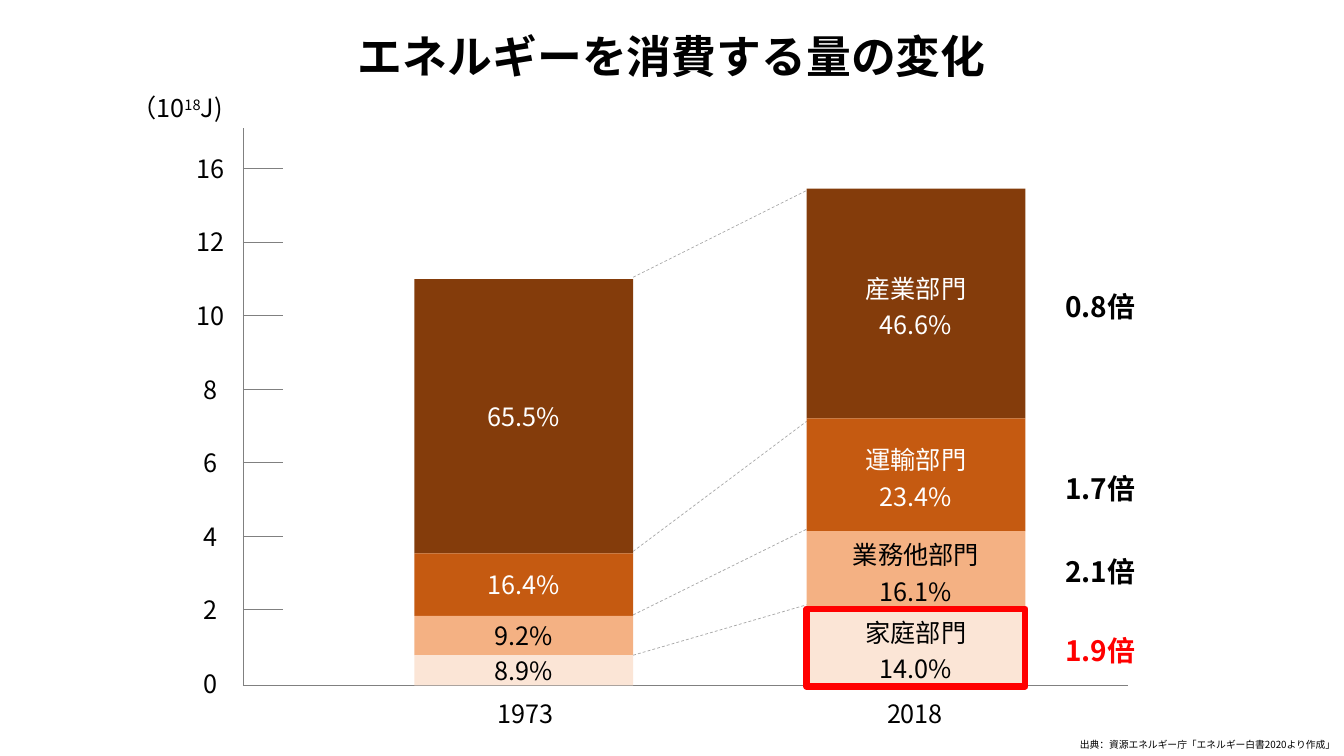
import lxml.etree
import pptx
import pptx.dml.color
import pptx.enum.dml
import pptx.enum.shapes
import pptx.enum.text
import pptx.oxml.ns
import pptx.util

Inches = pptx.util.Inches
Pt = pptx.util.Pt
RGBColor = pptx.dml.color.RGBColor
PP_ALIGN = pptx.enum.text.PP_ALIGN
MSO_ANCHOR = pptx.enum.text.MSO_ANCHOR
qn = pptx.oxml.ns.qn

BLACK = RGBColor(0x00, 0x00, 0x00)
WHITE = RGBColor(0xFF, 0xFF, 0xFF)
RED = RGBColor(0xFF, 0x00, 0x00)
AXIS_GRAY = RGBColor(0x80, 0x80, 0x80)
LINK_GRAY = RGBColor(0xA6, 0xA6, 0xA6)
# (fill, text) for industry, transport, commercial, household
SECTOR_COLORS = [
    (RGBColor(0x84, 0x3C, 0x0B), WHITE),
    (RGBColor(0xC5, 0x5A, 0x11), WHITE),
    (RGBColor(0xF4, 0xB1, 0x83), BLACK),
    (RGBColor(0xFB, 0xE5, 0xD6), BLACK),
]

AXIS_X, AXIS_TOP, AXIS_RIGHT, BASELINE = 2.41, 1.27, 11.19, 6.8
TICK_TOP, TICK_STEP, TICK_LENGTH = 1.67, 0.73, 0.4
BAR_WIDTH = 2.17
BAR_1973, BAR_2018 = 4.11, 8


class SlideBuilder:
    font_name = "Noto Sans CJK JP"

    def __init__(self, slide):
        self.slide = slide

    def add_run(self, paragraph, text, size, color, bold=False, baseline=0):
        run = paragraph.add_run()
        run.text = text
        run.font.size = Pt(size)
        run.font.bold = bold
        run.font.color.rgb = color
        run.font.name = self.font_name
        properties = run.font._element
        lxml.etree.SubElement(properties, qn("a:ea"), typeface=self.font_name)
        if baseline:
            properties.set("baseline", str(baseline * 1000))

    def title(self, text, left, top, width, height):
        shape = self.slide.shapes.title
        shape.left, shape.top = Inches(left), Inches(top)
        shape.width, shape.height = Inches(width), Inches(height)
        frame = shape.text_frame
        frame.auto_size = pptx.enum.text.MSO_AUTO_SIZE.NONE
        frame.vertical_anchor = MSO_ANCHOR.TOP
        paragraph = frame.paragraphs[0]
        paragraph.alignment = PP_ALIGN.CENTER
        self.add_run(paragraph, text, 32, BLACK, bold=True)

    def label(self, runs, left, top, width, height, size=18, color=BLACK,
              bold=False, alignment=PP_ALIGN.CENTER):
        """Add a text box; runs is a list of (text, baseline percent)."""
        shape = self.slide.shapes.add_textbox(
            Inches(left), Inches(top), Inches(width), Inches(height))
        shape.text_frame.word_wrap = True
        paragraph = shape.text_frame.paragraphs[0]
        paragraph.alignment = alignment
        for text, baseline in runs:
            self.add_run(paragraph, text, size, color, bold, baseline)

    def segment(self, lines, left, top, height, fill, color):
        shape = self.slide.shapes.add_shape(
            pptx.enum.shapes.MSO_SHAPE.RECTANGLE,
            Inches(left), Inches(top), Inches(BAR_WIDTH), Inches(height))
        shape.shadow.inherit = False
        shape.fill.solid()
        shape.fill.fore_color.rgb = fill
        shape.line.fill.background()
        frame = shape.text_frame
        frame.word_wrap = True
        frame.vertical_anchor = MSO_ANCHOR.MIDDLE
        for index, text in enumerate(lines):
            paragraph = frame.add_paragraph() if index else frame.paragraphs[0]
            paragraph.alignment = PP_ALIGN.CENTER
            if len(lines) > 1:
                paragraph.line_spacing = 1.2
            self.add_run(paragraph, text, 18, color)
        return shape

    def stacked_bar(self, left, top, segments):
        """Stack (lines, height) segments downwards; return the lowest one."""
        for (lines, height), (fill, color) in zip(segments, SECTOR_COLORS):
            shape = self.segment(lines, left, top, height, fill, color)
            top += height
        return shape

    def line(self, x1, y1, x2, y2, color=AXIS_GRAY, dashed=False):
        connector = self.slide.shapes.add_connector(
            pptx.enum.shapes.MSO_CONNECTOR.STRAIGHT,
            Inches(x1), Inches(y1), Inches(x2), Inches(y2))
        connector.line.color.rgb = color
        connector.line.width = Pt(0.5)
        if dashed:
            connector.line.dash_style = pptx.enum.dml.MSO_LINE.DASH
        lxml.etree.SubElement(connector._element.spPr, qn("a:effectLst"))


def main():
    presentation = pptx.Presentation()
    presentation.slide_width = Inches(13.33)
    presentation.slide_height = Inches(7.5)
    slide = presentation.slides.add_slide(presentation.slide_layouts[5])
    builder = SlideBuilder(slide)
    builder.title("エネルギーを消費する量の変化", 2.34, 0.23, 8.65, 0.64)

    builder.line(AXIS_X, BASELINE, AXIS_RIGHT, BASELINE)
    builder.line(AXIS_X, BASELINE, AXIS_X, AXIS_TOP)
    builder.label([("（10", 0), ("18", 30), ("J)", 0)], 1.09, 0.87, 1.33, 0.4)
    for index, value in enumerate(["16", "12", "10", "8", "6", "4", "2", "0"]):
        y = TICK_TOP + index * TICK_STEP
        builder.label([(value, 0)], 1.75, y - 0.2, 0.67, 0.4)
        if value != "0":
            builder.line(AXIS_X, y, AXIS_X + TICK_LENGTH, y)

    builder.stacked_bar(BAR_1973, 2.77, [
        (["65.5%"], 2.72),
        (["16.4%"], 0.62),
        (["9.2%"], 0.39),
        (["8.9%"], 0.3),
    ])
    for y_1973, y_2018 in [(2.75, 1.89), (5.47, 4.18), (6.1, 5.25), (6.5, 6)]:
        builder.line(BAR_1973 + BAR_WIDTH, y_1973, BAR_2018, y_2018,
                     LINK_GRAY, dashed=True)
    household = builder.stacked_bar(BAR_2018, 1.87, [
        (["産業部門", "46.6%"], 2.28),
        (["運輸部門", "23.4%"], 1.12),
        (["業務他部門", "16.1%"], 0.77),
        (["家庭部門", "14.0%"], 0.77),
    ])
    household.line.color.rgb = RED
    household.line.width = Pt(4.5)

    for year, left in [("1973", 3.96), ("2018", 7.82)]:
        builder.label([(year, 0)], left, 6.88, 2.51, 0.4)
    for ratio, top, color in [("0.8倍", 2.82, BLACK), ("1.7倍", 4.63, BLACK),
                              ("2.1倍", 5.45, BLACK), ("1.9倍", 6.24, RED)]:
        builder.label([(ratio, 0)], 10.36, top, 1.11, 0.44, 20, color, bold=True)
    builder.label([("出典：資源エネルギー庁「エネルギー白書2020より作成」", 0)],
                  8.59, 7.28, 4.75, 0.22, 7, alignment=PP_ALIGN.RIGHT)

    presentation.save("out.pptx")


if __name__ == "__main__":
    main()
